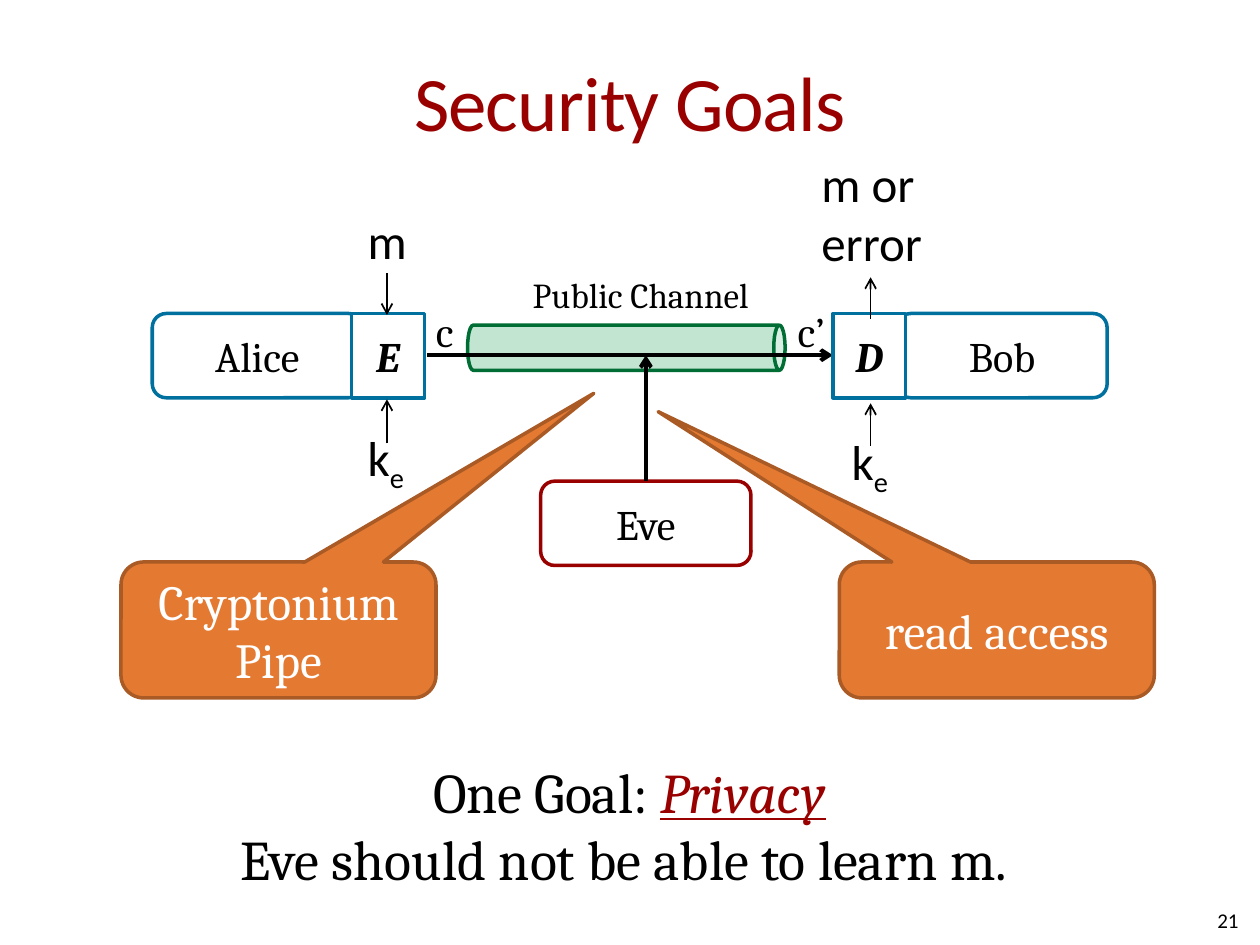
"""Builds the "Security Goals" slide on private communication over a public channel."""
from lxml import etree
from pptx import Presentation
from pptx.dml.color import RGBColor
from pptx.enum.shapes import MSO_CONNECTOR, MSO_SHAPE
from pptx.enum.text import MSO_ANCHOR, MSO_AUTO_SIZE, PP_ALIGN
from pptx.oxml.ns import qn
from pptx.util import Cm, Pt

BLACK = RGBColor(0x00, 0x00, 0x00)
WHITE = RGBColor(0xFF, 0xFF, 0xFF)
RED = RGBColor(0x99, 0x00, 0x00)
BLUE = RGBColor(0x00, 0x70, 0x9E)
GREEN = RGBColor(0x00, 0x94, 0x46)
DARK_GREEN = RGBColor(0x00, 0x6D, 0x34)
ORANGE = RGBColor(0xE4, 0x79, 0x32)
BROWN = RGBColor(0xA9, 0x5A, 0x25)

SANS, SERIF = "Calibri", "Cambria"
LEFT, CENTER, RIGHT = PP_ALIGN.LEFT, PP_ALIGN.CENTER, PP_ALIGN.RIGHT
MIDDLE, TOP = MSO_ANCHOR.MIDDLE, MSO_ANCHOR.TOP
GROW, FIXED = MSO_AUTO_SIZE.SHAPE_TO_FIT_TEXT, MSO_AUTO_SIZE.NONE
RECT, ROUNDED = MSO_SHAPE.RECTANGLE, MSO_SHAPE.ROUNDED_RECTANGLE
CALLOUT, CAN = MSO_SHAPE.ROUNDED_RECTANGULAR_CALLOUT, MSO_SHAPE.CAN
STRAIGHT = MSO_CONNECTOR.STRAIGHT
TITLE_ONLY = 5

WIRE_Y = 7.16
PARTY_TOP, PARTY_HEIGHT = 6.32, 1.7
PARTY_WIDTH, CIPHER_WIDTH = 4.24, 1.47


class Diagram:
    """Holds the slide and draws its elements in one style."""

    def __init__(self, slide):
        self.slide = slide

    def style(self, frame, size, color, font, align):
        for paragraph in frame.paragraphs:
            paragraph.alignment = align
            for run in paragraph.runs:
                run.font.size = Pt(size)
                run.font.name = font
                run.font.color.rgb = color

    def inset(self, frame, x, y):
        frame.margin_left = frame.margin_right = Cm(x)
        frame.margin_top = frame.margin_bottom = Cm(y)

    def title(self, words, box):
        title = self.slide.shapes.title
        title.left, title.top, title.width, title.height = map(Cm, box)
        frame = title.text_frame
        frame.text = words
        frame.vertical_anchor = MIDDLE
        self.inset(frame, 0, 0.13)
        self.style(frame, 44, RED, SANS, CENTER)
        frame.paragraphs[0].runs[0].font._element.set("spc", "-50")

    def shape(self, kind, box, fill, line):
        shape = self.slide.shapes.add_shape(kind, *map(Cm, box))
        shape.shadow.inherit = False
        shape.fill.solid()
        shape.fill.fore_color.rgb = fill
        shape.line.color.rgb = line
        shape.line.width = Pt(2)
        return shape

    def node(self, kind, words, box, line, emphasis=False):
        frame = self.shape(kind, box, WHITE, line).text_frame
        frame.text = words
        frame.vertical_anchor = MIDDLE
        self.inset(frame, 0, 0)
        self.style(frame, 24, BLACK, SERIF, CENTER)
        font = frame.paragraphs[0].runs[0].font
        font.bold = font.italic = emphasis

    def callout(self, words, left, tip):
        callout = self.shape(CALLOUT, (left, 11.33, 6.35, 2.74), ORANGE, BROWN)
        callout.adjustments[0], callout.adjustments[1] = tip
        frame = callout.text_frame
        frame.text = words
        frame.vertical_anchor = MIDDLE
        self.style(frame, 28, WHITE, SERIF, CENTER)

    def channel(self, box):
        channel = self.shape(CAN, box, GREEN, DARK_GREEN)
        channel.rotation = 90
        color = channel.fill._xPr.find(qn("a:solidFill"))[0]
        etree.SubElement(color, qn("a:alpha")).set("val", "24000")

    def arrow(self, start, end, width=1):
        arrow = self.slide.shapes.add_connector(STRAIGHT, *map(Cm, start + end))
        arrow.line.color.rgb = BLACK
        arrow.line.width = Pt(width)
        line = arrow.line._get_or_add_ln()
        etree.SubElement(line, qn("a:tailEnd")).set("type", "arrow")
        etree.SubElement(arrow._element.spPr, qn("a:effectLst"))

    def text(self, words, box, size, font=SERIF, align=LEFT, margin=(0, 0),
             wrap=False, fit=GROW, anchor=TOP):
        frame = self.slide.shapes.add_textbox(*map(Cm, box)).text_frame
        frame.text = words
        frame.word_wrap = wrap
        frame.auto_size = fit
        frame.vertical_anchor = anchor
        self.inset(frame, *margin)
        self.style(frame, size, BLACK, font, align)
        return frame

    def message(self, words, box):
        self.text(words, box, 28, SANS, margin=(0.25, 0.13), fit=FIXED)

    def key(self, left, top):
        frame = self.text("k", (left, top, 1.3, 1.45), 28, SANS, margin=(0.25, 0.13))
        subscript = frame.paragraphs[0].add_run()
        subscript.text = "e"
        self.style(frame, 28, BLACK, SANS, LEFT)
        subscript.font._element.set("baseline", "-25000")

    def goal(self, box):
        frame = self.text("One Goal: \nEve should not be able to learn m. ",
                          box, 32, align=CENTER)
        privacy = frame.paragraphs[0].add_run()
        privacy.text = "Privacy"
        self.style(frame, 32, BLACK, SERIF, CENTER)
        privacy.font.color.rgb = RED
        privacy.font.italic = privacy.font.underline = True


def main():
    presentation = Presentation()
    presentation.slide_width, presentation.slide_height = Cm(25.4), Cm(19.05)
    layout = presentation.slide_layouts[TITLE_ONLY]
    diagram = Diagram(presentation.slides.add_slide(layout))

    diagram.callout("Cryptonium\vPipe", 2.44, (1.001, -1.741))
    diagram.title("Security Goals", (1.27, 0.43, 22.86, 3.18))
    diagram.text("21", (19.05, 18.03, 5.92, 1.02), 12, SANS, RIGHT,
                 wrap=True, fit=FIXED, anchor=MIDDLE)
    diagram.channel((12.17, 3.81, 0.91, 6.4))

    for name, left in (("Alice", 3.07), ("Bob", 18.08)):
        diagram.node(ROUNDED, name, (left, PARTY_TOP, PARTY_WIDTH, PARTY_HEIGHT), BLUE)
    diagram.arrow((8.61, WIRE_Y), (16.79, WIRE_Y), 2.25)
    diagram.text("Public Channel", (10.74, 5.51, 4.52, 0.86), 20)
    diagram.node(ROUNDED, "Eve", (10.9, 9.7, PARTY_WIDTH, PARTY_HEIGHT), RED)
    diagram.arrow((13.02, 9.7), (13.02, WIRE_Y), 2.25)
    for cipher, left in (("E", 7.09), ("D", 16.79)):
        diagram.node(RECT, cipher, (left, PARTY_TOP, CIPHER_WIDTH, PARTY_HEIGHT),
                     BLUE, emphasis=True)
    for ciphertext, left, width in (("c", 8.79, 0.38), ("c’", 16.08, 0.58)):
        diagram.text(ciphertext, (left, 6.15, width, 1.02), 24)
    diagram.goal((4.5, 15.27, 16.38, 2.74))

    for x, start, end in ((7.8, 5.51, 6.35), (7.8, 8.94, 8.05),
                          (17.55, 8.99, 8.13), (17.55, 6.43, 5.59)):
        diagram.arrow((x, start), (x, end))
    diagram.message("m", (7.16, 4.11, 1.27, 1.27))
    diagram.message("m or \verror", (16.31, 2.97, 2.54, 2.54))
    diagram.key(7.16, 8.48)
    diagram.key(16.92, 8.56)
    diagram.callout("read access", 16.92, (-1.075, -1.606))

    presentation.save("out.pptx")


if __name__ == "__main__":
    main()
